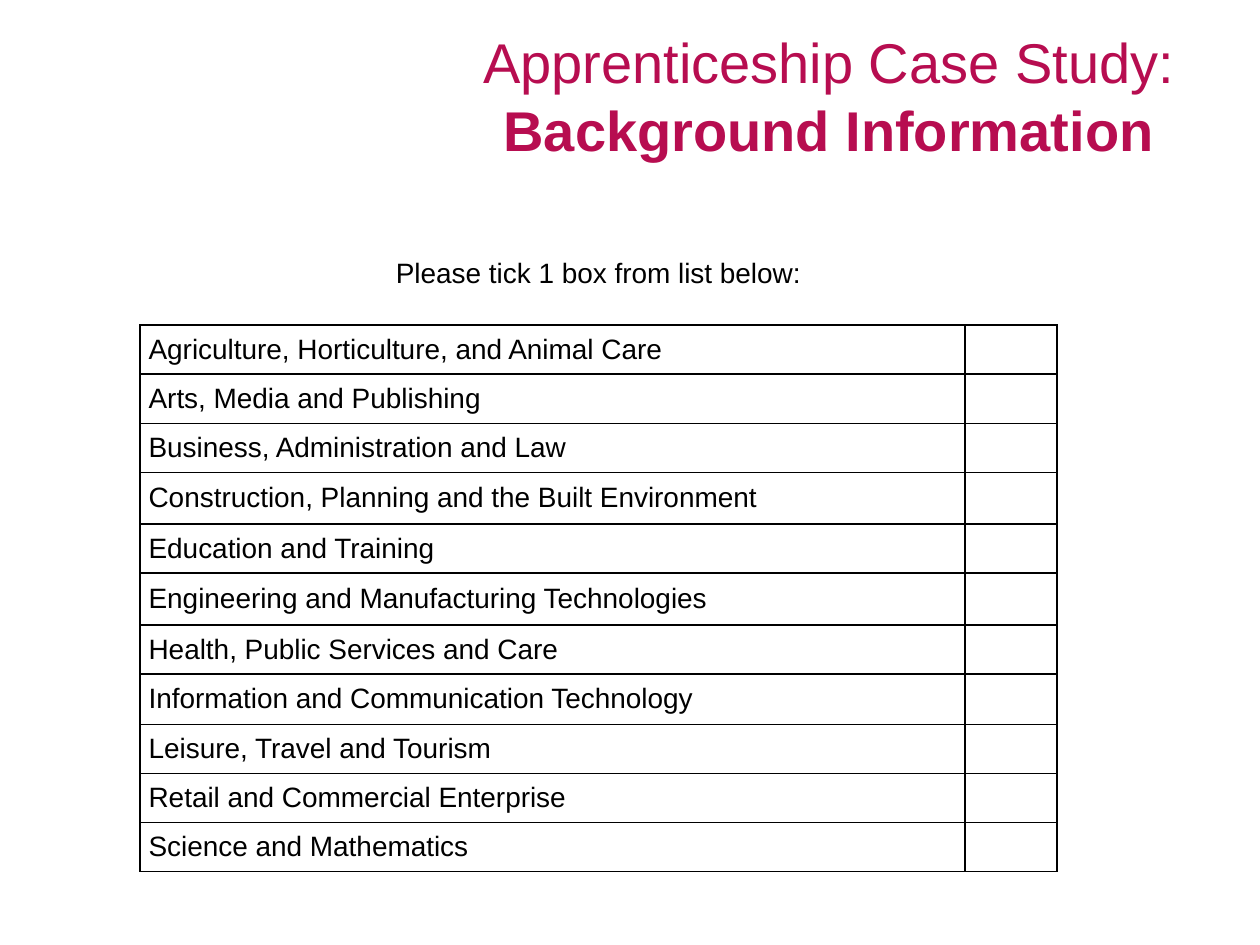
from lxml import etree
from pptx import Presentation
from pptx.dml.color import RGBColor
from pptx.enum.text import MSO_ANCHOR, PP_ALIGN
from pptx.oxml.ns import qn
from pptx.util import Inches, Pt

TOP, MIDDLE = MSO_ANCHOR.TOP, MSO_ANCHOR.MIDDLE
CENTER, LEFT = PP_ALIGN.CENTER, PP_ALIGN.LEFT
TITLE_ONLY = 5

# Content
TITLE = [("Apprenticeship Case Study:", False), ("Background Information", True)]
PROMPT = "Please tick 1 box from list below:"
SECTORS = [
    "Agriculture, Horticulture, and Animal Care",
    "Arts, Media and Publishing",
    "Business, Administration and Law",
    "Construction, Planning and the Built Environment",
    "Education and Training",
    "Engineering and Manufacturing Technologies",
    "Health, Public Services and Care",
    "Information and Communication Technology",
    "Leisure, Travel and Tourism",
    "Retail and Commercial Enterprise",
    "Science and Mathematics",
]
COLUMN_WIDTHS = [6.55, 0.73]
ROW_HEIGHTS = [0.53, 0.39, 0.39, 0.39, 0.41, 0.39, 0.41, 0.39, 0.4, 0.39, 0.39, 0.39]
CELL_FORMAT = {
    "margin_left": Inches(0.07), "margin_right": Inches(0.07),
    "margin_top": 0, "margin_bottom": 0,
}
ALL_SIDES = ("L", "R", "T", "B")


def style_font(font, size, color, bold=False):
    for name, value in {"name": "Arial", "size": Pt(size), "bold": bold}.items():
        setattr(font, name, value)
    font.color.rgb = RGBColor.from_string(color)


def set_borders(cell, visible):
    """Draw black 1 pt lines on the visible sides and none on the others."""
    properties = cell._tc.get_or_add_tcPr()
    for position, side in enumerate(ALL_SIDES):
        line = etree.Element(qn(f"a:ln{side}"), w=str(Pt(1)))
        if side in visible:
            fill = etree.SubElement(line, qn("a:solidFill"))
            etree.SubElement(fill, qn("a:srgbClr"), val="000000")
        else:
            etree.SubElement(line, qn("a:noFill"))
        properties.insert(position, line)


def format_cell(cell, text, align, anchor, sides):
    for name, value in CELL_FORMAT.items():
        setattr(cell, name, value)
    cell.vertical_anchor = anchor
    cell.fill.background()
    set_borders(cell, sides)
    para = cell.text_frame.paragraphs[0]
    para.alignment = align
    style_font(para.font, 16, "000000")
    if text:
        span = para.add_run()
        span.text = text
        style_font(span.font, 16, "000000")


def add_title(page):
    title = page.shapes.title
    title.left, title.top = Inches(2.09), Inches(0.13)
    title.width, title.height = Inches(8.98), Inches(1.25)
    title.text_frame.word_wrap = True
    title.text_frame.vertical_anchor = MIDDLE
    para = title.text_frame.paragraphs[0]
    para.alignment = CENTER
    for index, (text, bold) in enumerate(TITLE):
        if index:
            para.add_line_break()
        span = para.add_run()
        span.text = text
        style_font(span.font, 32, "B70D50", bold)


def add_sector_table(page):
    frame = page.shapes.add_table(
        len(ROW_HEIGHTS), len(COLUMN_WIDTHS), Inches(1.11), Inches(2.05),
        Inches(sum(COLUMN_WIDTHS)), Inches(sum(ROW_HEIGHTS)))
    table = frame.table
    table.first_row = table.horz_banding = False
    for column, width in zip(table.columns, COLUMN_WIDTHS):
        column.width = Inches(width)
    for row, height in zip(table.rows, ROW_HEIGHTS):
        row.height = Inches(height)

    # Prompt row across both columns, then one row with a tick box per sector
    table.cell(0, 0).merge(table.cell(0, 1))
    for column, text in enumerate((PROMPT, "")):
        format_cell(table.cell(0, column), text, CENTER, TOP, ("B",))
    for row, sector in enumerate(SECTORS, start=1):
        for column, text in enumerate((sector, "")):
            format_cell(table.cell(row, column), text, LEFT, MIDDLE, ALL_SIDES)


def main():
    deck = Presentation()
    deck.slide_width, deck.slide_height = Inches(10), Inches(7.5)
    page = deck.slides.add_slide(deck.slide_layouts[TITLE_ONLY])
    add_title(page)
    add_sector_table(page)
    deck.save("out.pptx")


if __name__ == "__main__":
    main()
